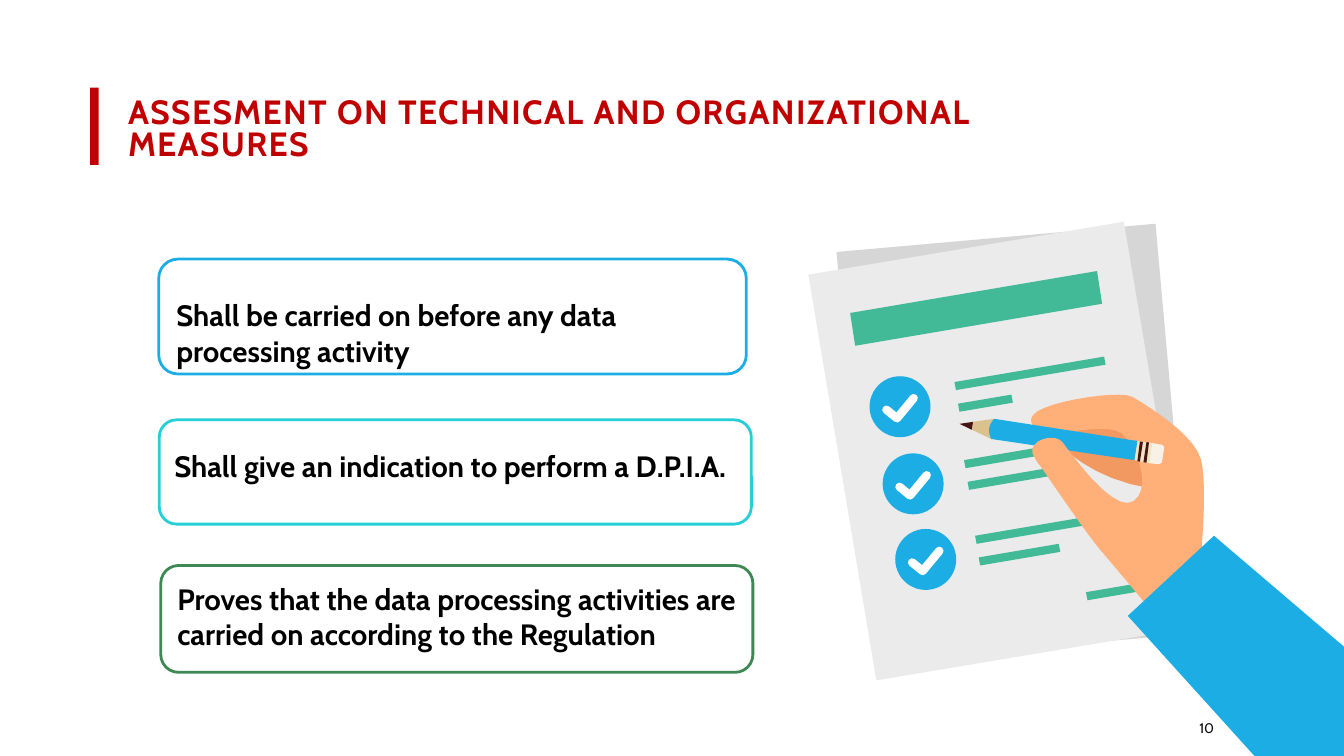
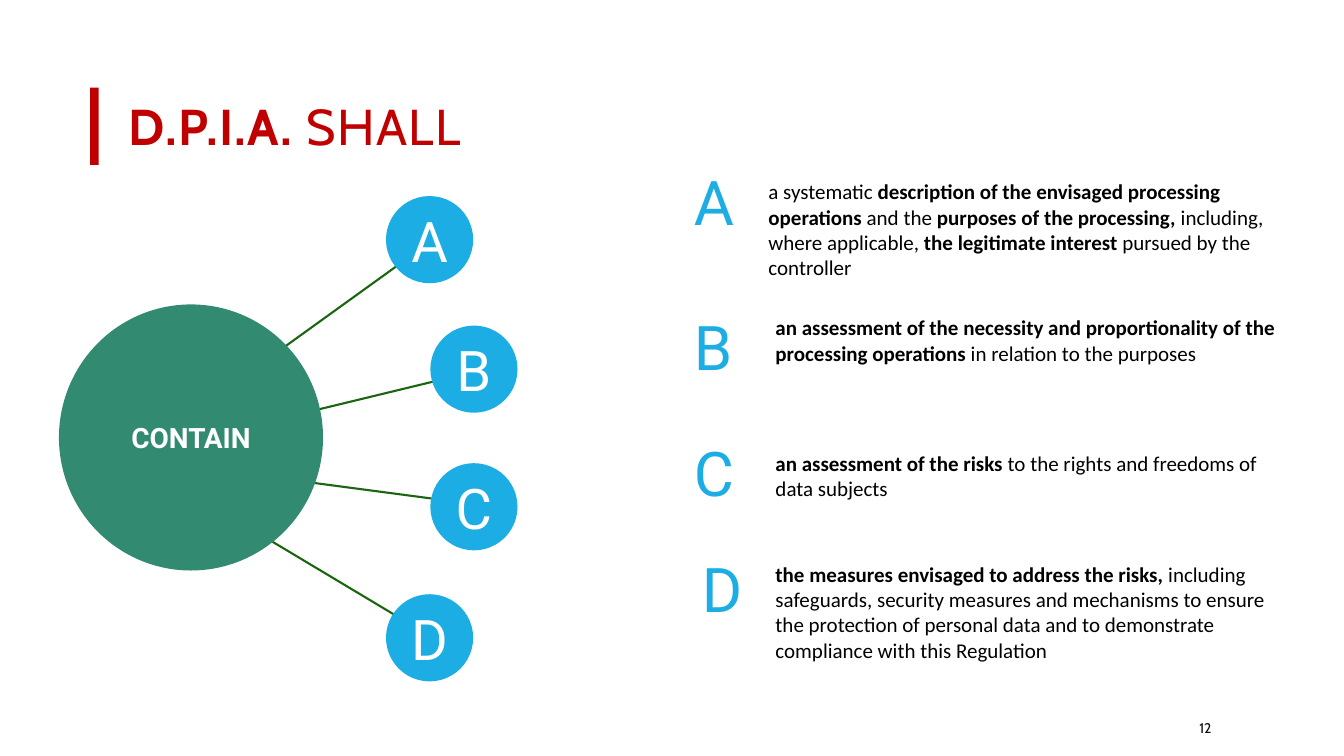
from lxml import etree
from pptx import Presentation
from pptx.dml.color import RGBColor
from pptx.enum.shapes import MSO_CONNECTOR, MSO_SHAPE
from pptx.enum.text import MSO_ANCHOR, MSO_AUTO_SIZE, PP_ALIGN
from pptx.oxml.ns import qn
from pptx.util import Inches, Pt

RECT, ROUND_RECT, OVAL = MSO_SHAPE.RECTANGLE, MSO_SHAPE.ROUNDED_RECTANGLE, MSO_SHAPE.OVAL
STRAIGHT = MSO_CONNECTOR.STRAIGHT
TOP, MIDDLE = MSO_ANCHOR.TOP, MSO_ANCHOR.MIDDLE
LEFT, CENTER, JUSTIFY = PP_ALIGN.LEFT, PP_ALIGN.CENTER, PP_ALIGN.JUSTIFY

RED, BLUE, MINT, WHITE, BLACK = "C00000", "1CADE4", "42BA97", "FFFFFF", "000000"
SKIN, DARK = "FFAF77", "451613"
TITLE_FONT, TEXT_FONT, LABEL_FONT = "Cabin", "Calibri", "Roboto"


def paint(sp, fill=None, line=None, width=1):
    sp.shadow.inherit = False
    if fill:
        sp.fill.solid()
        sp.fill.fore_color.rgb = RGBColor.from_string(fill)
    else:
        sp.fill.background()
    if line:
        sp.line.color.rgb = RGBColor.from_string(line)
        sp.line.width = Pt(width)
    else:
        sp.line.fill.background()


def write(sp, runs, size, font, color, anchor=TOP, align=LEFT, spacing=None):
    """Fill the shape with one paragraph of (text, bold) runs; spacing is in points."""
    tf = sp.text_frame
    tf.word_wrap = True
    tf.auto_size = MSO_AUTO_SIZE.NONE
    tf.vertical_anchor = anchor
    p = tf.paragraphs[0]
    p.alignment = align
    for text, bold in runs:
        r = p.add_run()
        r.text = text
        r.font.size = Pt(size)
        r.font.name = font
        r.font.bold = bold
        r.font.color.rgb = RGBColor.from_string(color)
        if spacing:
            r.font._element.set("spc", str(spacing * 100))
    return p


prs = Presentation()
prs.slide_width, prs.slide_height = Inches(26.67), Inches(15)

# Shared frame: title, red bar, page number
pages = [
    ([("ASSESMENT ON TECHNICAL AND ORGANIZATIONAL MEASURES", True)], 48, 20.18, "10"),
    ([("D.P.I.A. ", True), ("SHALL", False)], 72, 24.22, "12"),
]
for runs, size, width, number in pages:
    s = prs.slides.add_slide(prs.slide_layouts[5])
    title = s.shapes.title
    title.left, title.top = Inches(2.44), Inches(0.95)
    title.width, title.height = Inches(width), Inches(3.28)
    p = write(title, runs, size, TITLE_FONT, RED, MIDDLE, spacing=2)
    p.line_spacing = 0.8
    bar = s.shapes.add_shape(RECT, Inches(1.79), Inches(1.74), Inches(0.17), Inches(1.53))
    paint(bar, RED)
    box = s.shapes.add_textbox(Inches(23.7), Inches(14.15), Inches(2.13), Inches(0.6))
    write(box, [(number, False)], 20, TITLE_FONT, "0D0D0D", MIDDLE)

measures, dpia = prs.slides

# Checklist drawing. A point is (x, y); six numbers make a cubic curve.
# Tilted bars: left, top, length, and the offset to the lower edge.
bars = [(16.87, 6.21, 4.9, 0.1, 0.65)] + [
    (x, y, length, 0.03, 0.16) for x, y, length in [
        (18.94, 7.58, 2.97), (19.01, 8.01, 1.06), (19.13, 9.13, 2.98), (19.2, 9.56, 2.11),
        (19.35, 10.63, 2.97), (19.42, 11.06, 1.59), (21.55, 11.75, 1.23)]]
SLOPE = 0.17
sheets = [
    ("D6D6D6", [(23.66, 12.57), (17.33, 13.14), (16.6, 5), (22.93, 4.44)]),
    ("EBEBEB", [(23.66, 12.45), (17.39, 13.5), (16.04, 5.45), (22.3, 4.4)]),
]
lines = [(MINT, [(x, y), (x + n, y - SLOPE * n), (x + n + dx, y - SLOPE * n + dy),
                 (x + dx, y + dy)]) for x, y, n, dx, dy in bars]
hand = [
    ("F19961", [(22.85, 9.69), (21.39, 9.48, 20.75, 8.51, 20.75, 8.51), (22.26, 8.29),
                (22.26, 8.29, 24.33, 9.9, 22.85, 9.69)]),
    (SKIN, [(22.76, 12.01), (23.83, 11.05), (23.83, 11.05, 23.97, 9.62, 23.83, 9.11),
            (23.69, 8.6, 22.7, 8.01, 22.46, 7.87), (22.22, 7.75, 20.96, 7.93, 20.59, 8.16),
            (20.3, 8.35, 20.56, 8.55, 20.75, 8.6), (20.94, 8.66, 21.99, 8.36, 22.27, 8.61),
            (22.55, 8.86, 22.87, 9.67, 22.5, 9.94), (22.12, 10.22, 21.25, 9, 21.09, 8.78),
            (20.93, 8.56, 20.3, 8.76, 20.54, 9.09), (20.77, 9.43, 21.52, 10.53, 21.8, 10.87),
            (22.09, 11.21, 22.76, 12.01, 22.76, 12.01)]),
]
pencil = [
    (DARK, [(19.29, 8.53), (19.31, 8.37), (19.04, 8.41)]),
    ("DAC18E", [(19.67, 8.71), (19.73, 8.31), (19.31, 8.37), (19.29, 8.53)]),
    ("F7F1E6", [(22.98, 9.21), (23.01, 9.21, 23.06, 9.19, 23.06, 9.15), (23.1, 8.91),
                (23.11, 8.87, 23.08, 8.82, 23.03, 8.82), (22.86, 8.79), (22.8, 9.19)]),
    ("F1E4C4", [(22.51, 9.13), (22.81, 9.19), (22.86, 8.79), (22.57, 8.75)]),
    (BLUE, [(19.63, 8.5), (19.64, 8.4, 19.73, 8.31, 19.73, 8.31), (22.57, 8.75),
            (22.51, 9.13), (19.67, 8.71), (19.67, 8.71, 19.61, 8.58, 19.63, 8.5)]),
    (DARK, [(22.69, 9.17), (22.75, 9.18), (22.8, 8.78), (22.75, 8.77)]),
    (DARK, [(22.57, 9.15), (22.62, 9.16), (22.68, 8.77), (22.62, 8.76)]),
]
thumb_and_sleeve = [
    (SKIN, [(21.09, 8.78), (20.93, 8.56, 20.3, 8.75, 20.54, 9.09),
            (20.56, 9.13, 20.59, 9.18, 20.63, 9.23), (21.48, 9.29),
            (21.29, 9.07, 21.15, 8.86, 21.09, 8.78)]),
    (BLUE, [(24.09, 10.63), (22.38, 12.22), (26.44, 16.71), (27.36, 13.42)]),
]

STEPS = 10
drawing = measures.shapes.add_group_shape()
for color, outline in sheets + lines + hand + pencil + thumb_and_sleeve:
    points = [outline[0]]
    for part in outline[1:]:
        if len(part) == 2:
            points.append(part)
            continue
        x0, y0 = points[-1]
        x1, y1, x2, y2, x3, y3 = part
        for i in range(1, STEPS + 1):
            t = i / STEPS
            a, b, c, d = (1 - t) ** 3, 3 * t * (1 - t) ** 2, 3 * t ** 2 * (1 - t), t ** 3
            points.append((a * x0 + b * x1 + c * x2 + d * x3,
                           a * y0 + b * y1 + c * y2 + d * y3))
    points = [(Inches(x), Inches(y)) for x, y in points]
    builder = drawing.shapes.build_freeform(*points[0])
    builder.add_line_segments(points[1:], close=True)
    paint(builder.convert_to_shape(), color)

DISC = 1.21
for cx, cy in [(17.86, 8.07), (18.12, 9.6), (18.37, 11.1)]:
    disc = drawing.shapes.add_shape(OVAL, Inches(cx - DISC / 2), Inches(cy - DISC / 2),
                                    Inches(DISC), Inches(DISC))
    paint(disc, BLUE)
    tick = [(Inches(cx + dx), Inches(cy + dy))
            for dx, dy in [(-0.27, 0.06), (-0.06, 0.23), (0.27, -0.17)]]
    builder = drawing.shapes.build_freeform(*tick[0])
    builder.add_line_segments(tick[1:], close=False)
    sp = builder.convert_to_shape()
    paint(sp, line=WHITE, width=12)
    ln = sp.line._get_or_add_ln()
    ln.set("cap", "rnd")
    etree.SubElement(ln, qn("a:round"))

# Cards: frame, frame colour, text box, text
cards = [
    ((3.15, 5.14, 11.66, 2.28), BLUE, (3.4, 5.85, 11.39, 1.51), LEFT,
     "Shall be carried on before any data processing activity"),
    ((3.16, 8.33, 11.75, 2.07), "27CED7", (3.36, 8.85, 11.37, 0.81), JUSTIFY,
     "Shall give an indication to perform a D.P.I.A."),
    ((3.19, 11.22, 11.75, 2.12), "3E8853", (3.42, 11.48, 11.35, 1.51), LEFT,
     "Proves that the data processing activities are carried on according to the Regulation"),
]
for frame, color, area, align, text in cards:
    card = measures.shapes.add_shape(ROUND_RECT, *map(Inches, frame))
    paint(card, line=color, width=4)
    box = measures.shapes.add_textbox(*map(Inches, area))
    write(box, [(text, True)], 42, TITLE_FONT, BLACK, align=align)

# Lettered requirements: letter box, text box, runs
requirements = [
    ("A", (13.67, 3.2), (15.15, 3.5, 10.79, 2.12), [
        ("a systematic ", False), ("description of the envisaged processing operations ", True),
        ("and the ", False), ("purposes of the processing, ", True),
        ("including, where applicable, ", False), ("the legitimate interest ", True),
        ("pursued by the controller", False)]),
    ("B", (13.67, 6.08), (15.29, 6.2, 10.97, 1.11), [
        ("an assessment of the necessity and proportionality of the processing operations", True),
        (" in relation to the purposes", False)]),
    ("C", (13.67, 8.57), (15.29, 8.89, 10.42, 1.11), [
        ("an assessment of the risks ", True),
        ("to the rights and freedoms of data subjects", False)]),
    ("D", (13.83, 10.88), (15.29, 11.09, 10.38, 2.12), [
        ("the measures envisaged to address the risks, ", True),
        ("including safeguards, security measures and mechanisms to ensure the protection of "
         "personal data and to demonstrate compliance with this Regulation", False)]),
]
for letter, (x, y), area, runs in requirements:
    box = dpia.shapes.add_textbox(*map(Inches, area))
    write(box, runs, 30, TEXT_FONT, BLACK)
    box = dpia.shapes.add_textbox(Inches(x), Inches(y), Inches(1.58), Inches(1.58))
    write(box, [(letter, False)], 88, LABEL_FONT, BLUE, MIDDLE)

# Hub and spokes: the spokes start behind the hub
for x1, y1, x2, y2 in [(2.68, 9.02, 8.51, 4.82), (2.66, 9.01, 9.39, 7.38),
                       (2.66, 9.11, 9.39, 10), (2.67, 9.11, 8.5, 12.6)]:
    spoke = dpia.shapes.add_connector(STRAIGHT, Inches(x1), Inches(y1), Inches(x2), Inches(y2))
    spoke.line.color.rgb = RGBColor.from_string("1C6510")
    spoke.line.width = Pt(3)
    etree.SubElement(spoke._element.spPr, qn("a:effectLst"))

NODE = 1.73
circles = [("CONTAIN", 1.17, 6.04, 5.24, 5.28, "328B71", 40, True)] + [
    (letter, x, y, NODE, NODE, BLUE, 80, False) for letter, x, y in [
        ("A", 7.66, 3.89), ("B", 8.54, 6.46), ("C", 8.54, 9.19), ("D", 7.66, 11.79)]]
for text, x, y, w, h, color, size, bold in circles:
    sp = dpia.shapes.add_shape(OVAL, Inches(x), Inches(y), Inches(w), Inches(h))
    paint(sp, color)
    tf = sp.text_frame
    tf.margin_left = tf.margin_right = tf.margin_top = tf.margin_bottom = 0
    write(sp, [(text, bold)], size, LABEL_FONT, WHITE, MIDDLE, CENTER)

prs.save("out.pptx")
